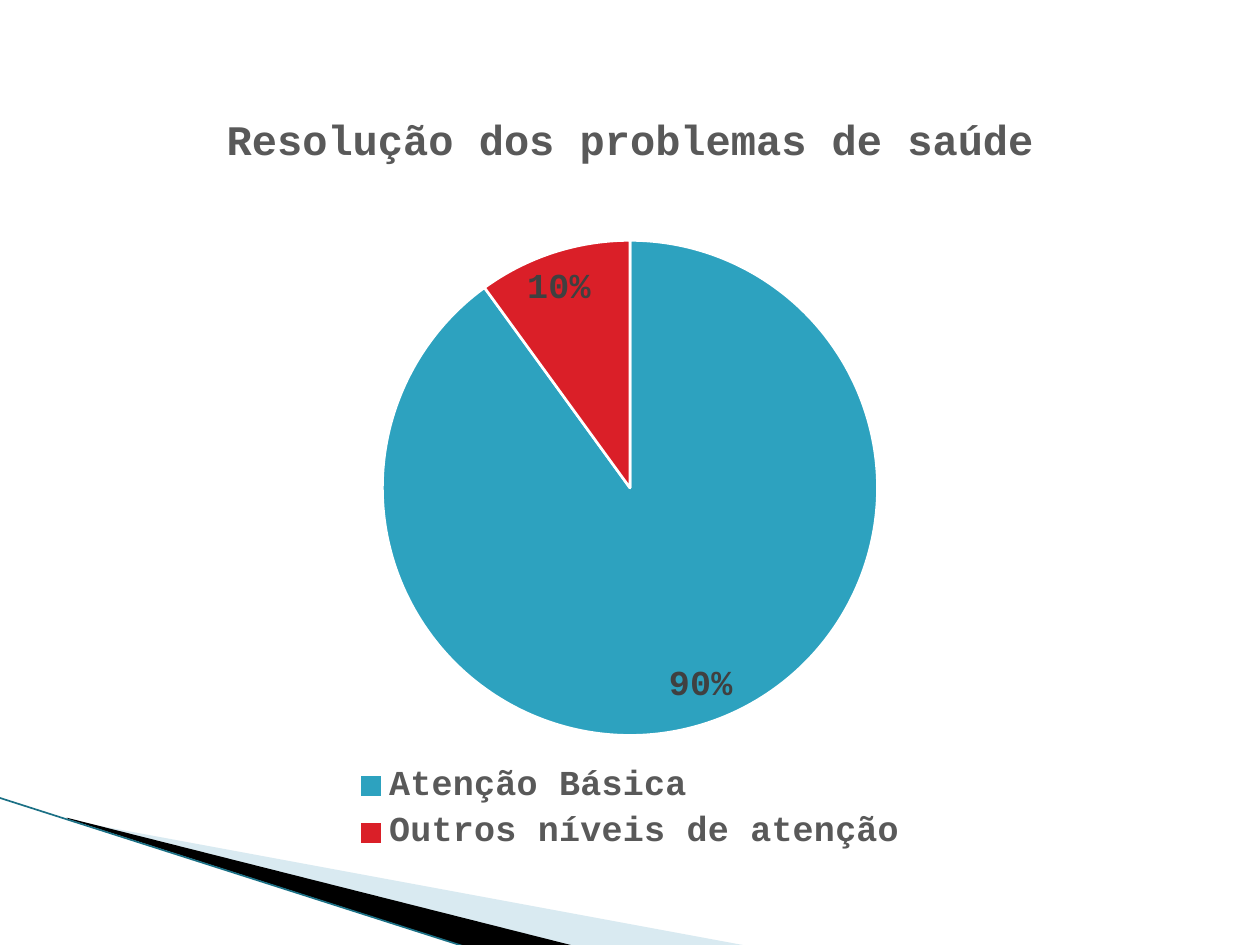
from lxml import etree
from pptx import Presentation
from pptx.chart.data import CategoryChartData
from pptx.dml.color import RGBColor
from pptx.enum.chart import XL_CHART_TYPE as ChartType
from pptx.enum.chart import XL_LABEL_POSITION as LabelPosition
from pptx.enum.chart import XL_LEGEND_POSITION as LegendPosition
from pptx.enum.shapes import MSO_CONNECTOR as Connector
from pptx.oxml import parse_xml
from pptx.oxml.ns import nsdecls, qn
from pptx.util import Inches, Pt


def paint(color_format, hex_color):
    color_format.rgb = RGBColor.from_string(hex_color)


def style_font(font, size, hex_color):
    for name, value in {"name": "Courier New", "size": Pt(size), "bold": True}.items():
        setattr(font, name, value)
    paint(font.color, hex_color)


deck = Presentation()
deck.slide_width, deck.slide_height = Inches(10), Inches(7.5)
page = deck.slides.add_slide(deck.slide_layouts[6])

# Corner wedges: frame and points in inches, fill, opacity in percent
wedges = [
    ((0.78, 5.47, 4.16, 1.58),
     [(0.55, 6.51), (5.95, 7.51), (4.56, 7.51), (0.55, 6.5)], "A0CBDC", 40),
    ((-0.06, 6.33, 4.16, 0.92),
     [(0.53, 6.49), (4.57, 7.51), (3.72, 7.52), (0.54, 6.5)], "000000", 100),
]
for frame, points, color, opacity in wedges:
    corners = [(Inches(x), Inches(y)) for x, y in points]
    builder = page.shapes.build_freeform(*corners[0])
    builder.add_line_segments(corners[1:], close=True)
    wedge = builder.convert_to_shape()
    wedge.shadow.inherit = False
    wedge.fill.solid()
    paint(wedge.fill.fore_color, color)
    wedge.line.fill.background()
    if opacity < 100:
        tint = wedge.fill._xPr.find(".//" + qn("a:srgbClr"))
        etree.SubElement(tint, qn("a:alpha"), val=str(opacity * 1000))

    # The outline reaches beyond its frame, so its points are set relative to it
    left, top, width, height = map(Inches, frame)
    wedge.left, wedge.top, wedge.width, wedge.height = left, top, width, height
    outline = wedge._element.find(".//" + qn("a:path"))
    outline.set("w", str(int(width)))
    outline.set("h", str(int(height)))
    for point, (x, y) in zip(outline.iter(qn("a:pt")), corners):
        point.set("x", str(x - left))
        point.set("y", str(y - top))

edge = page.shapes.add_connector(
    Connector.STRAIGHT, Inches(-0.01), Inches(6.33), Inches(3.71), Inches(7.52))
paint(edge.line.color, "1B7085")
edge.line.width = Pt(0.95)
etree.SubElement(edge._element.spPr, qn("a:effectLst"))

# Pie chart
title = "Resolução dos problemas de saúde"
data = CategoryChartData()
data.categories = ["Atenção Básica", "Outros níveis de atenção"]
data.add_series(title, [90, 10])
chart = page.shapes.add_chart(
    ChartType.PIE, Inches(0.67), Inches(0.68), Inches(8.66), Inches(6.14), data).chart
style_font(chart.font, 20, "000000")

chart.has_title = True
heading = chart.chart_title.text_frame
heading.text = title
style_font(heading.paragraphs[0].runs[0].font, 24, "595959")

chart.has_legend = True
chart.legend.position = LegendPosition.BOTTOM
chart.legend.include_in_layout = False
style_font(chart.legend.font, 20, "595959")

plot = chart.plots[0]
plot.vary_by_categories = True
for index, color in enumerate(["2DA2BF", "DA1F28"]):
    slice_format = plot.series[0].points[index].format
    slice_format.fill.solid()
    paint(slice_format.fill.fore_color, color)
    paint(slice_format.line.color, "FFFFFF")
    slice_format.line.width = Pt(1.5)

plot.has_data_labels = True
labels = plot.data_labels
label_format = {
    "show_percentage": True, "show_value": False, "number_format": "0%",
    "number_format_is_linked": False, "position": LabelPosition.BEST_FIT,
}
for name, value in label_format.items():
    setattr(labels, name, value)
style_font(labels.font, 20, "404040")

# Fixed plot area, as fractions of the chart frame
plot_area = chart._chartSpace.chart.plotArea
for old_layout in plot_area.findall(qn("c:layout")):
    plot_area.remove(old_layout)
fractions = {"x": 0.27, "y": 0.2, "w": 0.46, "h": 0.64}
settings = '<c:layoutTarget val="inner"/><c:xMode val="edge"/><c:yMode val="edge"/>'
settings += "".join(f'<c:{key} val="{value}"/>' for key, value in fractions.items())
plot_area.insert(0, parse_xml(
    f'<c:layout {nsdecls("c")}><c:manualLayout>{settings}</c:manualLayout></c:layout>'))

deck.save("out.pptx")
